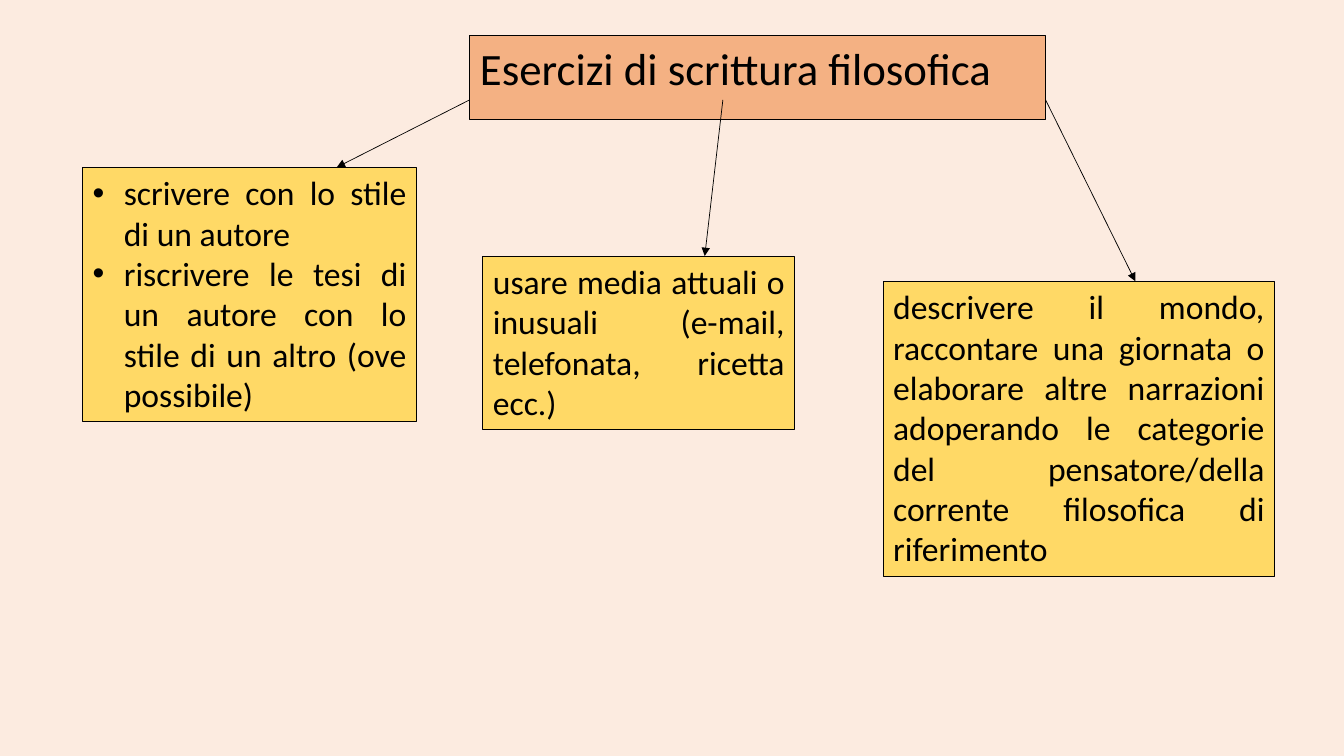
from pptx import Presentation
from pptx.dml.color import RGBColor
from pptx.enum.shapes import MSO_CONNECTOR, MSO_SHAPE
from pptx.enum.text import MSO_ANCHOR, MSO_AUTO_SIZE, PP_ALIGN
from pptx.oxml.ns import qn
from pptx.util import Inches, Pt
from lxml import etree

COLORS = {"background": "FCEBE0", "title": "F4B183", "card": "FFD966", "ink": "000000"}
FONT = "Calibri"


def rgb(name):
    return RGBColor.from_string(COLORS[name])


def fill_box(sp, color, paragraphs, size, align):
    sp.fill.solid()
    sp.fill.fore_color.rgb = rgb(color)
    sp.line.color.rgb = rgb("ink")
    sp.line.width = Pt(0.75)
    tf = sp.text_frame
    tf.word_wrap = True
    tf.auto_size = MSO_AUTO_SIZE.SHAPE_TO_FIT_TEXT
    tf.vertical_anchor = MSO_ANCHOR.TOP
    for i, text in enumerate(paragraphs):
        p = tf.add_paragraph() if i else tf.paragraphs[0]
        p.alignment = align
        r = p.add_run()
        r.text = text
        r.font.name = FONT
        r.font.size = Pt(size)
        r.font.color.rgb = rgb("ink")
        # Several paragraphs form a bulleted list
        if len(paragraphs) > 1:
            pPr = p._p.get_or_add_pPr()
            pPr.set("marL", str(Inches(0.31)))
            pPr.set("indent", str(Inches(-0.31)))
            etree.SubElement(pPr, qn("a:buFont")).set("typeface", "Arial")
            etree.SubElement(pPr, qn("a:buChar")).set("char", "•")


prs = Presentation()
prs.slide_width = Inches(13.33)
prs.slide_height = Inches(7.5)
s = prs.slides.add_slide(prs.slide_layouts[5])
s.background.fill.solid()
s.background.fill.fore_color.rgb = rgb("background")

# Title
title = s.shapes.title
title.left, title.top = Inches(4.66), Inches(0.35)
title.width, title.height = Inches(5.71), Inches(0.64)
fill_box(title, "title", ["Esercizi di scrittura filosofica"], 32, PP_ALIGN.LEFT)

# Exercises: box, arrow start x, arrow end x, paragraphs
exercises = [
    ((0.82, 1.66, 3.31, 2.52), 4.66, 3.34,
     ["scrivere con lo stile di un autore",
      "riscrivere le tesi di un autore con lo stile di un altro (ove possibile)"]),
    ((4.79, 2.54, 3.09, 1.72), 7.17, 6.99,
     ["usare media attuali o inusuali (e-mail, telefonata, ricetta ecc.)"]),
    ((8.76, 2.79, 3.88, 2.93), 10.37, 11.26,
     ["descrivere il mondo, raccontare una giornata o elaborare altre narrazioni "
      "adoperando le categorie del pensatore/della corrente filosofica di riferimento"]),
]
for box, start_x, end_x, paragraphs in exercises:
    sp = s.shapes.add_shape(MSO_SHAPE.RECTANGLE, *[Inches(v) for v in box])
    sp.shadow.inherit = False
    fill_box(sp, "card", paragraphs, 24, PP_ALIGN.JUSTIFY)

    # Arrow from the title to the top of the box
    arrow = s.shapes.add_connector(MSO_CONNECTOR.STRAIGHT, Inches(start_x),
                                   Inches(0.99), Inches(end_x), Inches(box[1]))
    arrow.line.color.rgb = rgb("ink")
    arrow.line.width = Pt(0.5)
    etree.SubElement(arrow.line._get_or_add_ln(), qn("a:tailEnd")).set("type", "triangle")
    etree.SubElement(arrow._element.spPr, qn("a:effectLst"))

prs.save("out.pptx")
